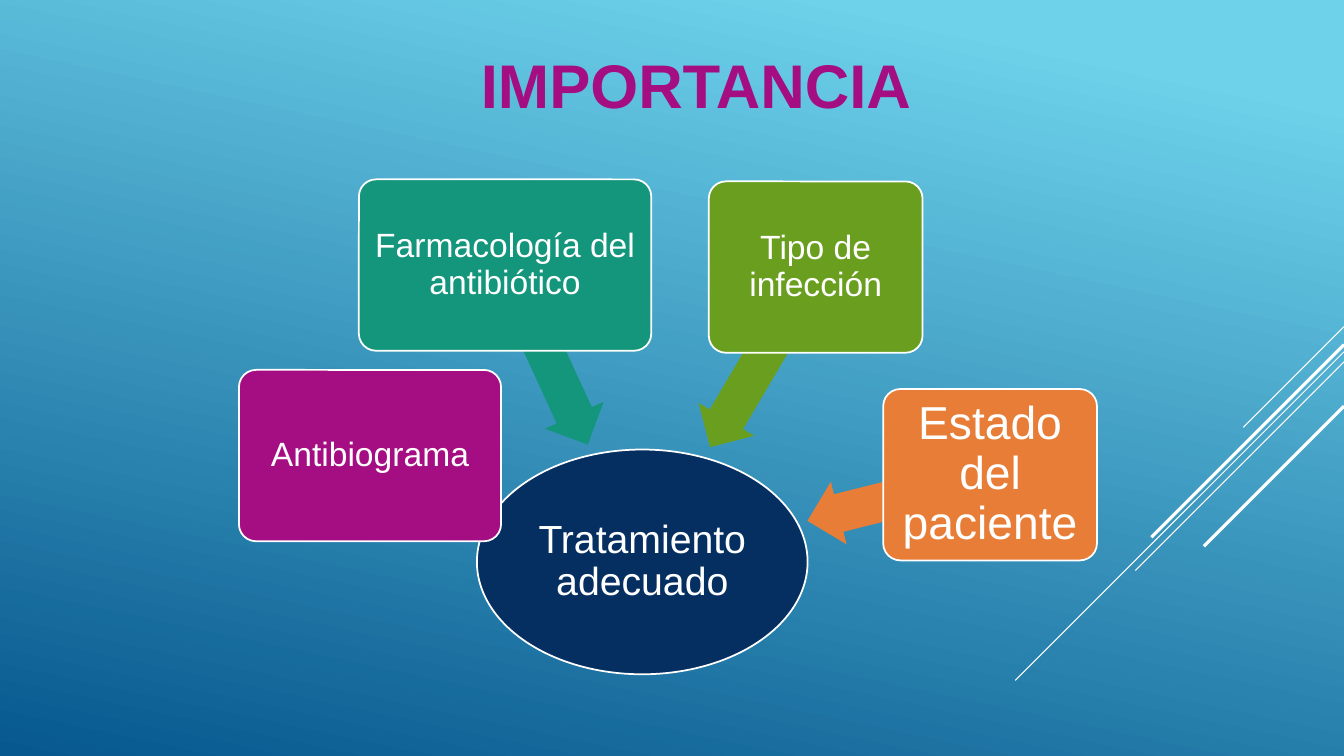
"""Build the slide on what leads to an adequate antibiotic treatment."""
from dataclasses import dataclass

from lxml.etree import SubElement
from pptx import Presentation
from pptx.dml.color import RGBColor
from pptx.enum.shapes import MSO_CONNECTOR as Connector, MSO_SHAPE as Shape
from pptx.enum.text import MSO_ANCHOR as Anchor, MSO_AUTO_SIZE as AutoSize, PP_ALIGN as Align
from pptx.oxml.ns import qn
from pptx.util import Inches, Pt


@dataclass(frozen=True)
class Theme:
    font: str = "Arial"
    white: str = "FFFFFF"
    sky: str = "6ED2EB"
    ocean: str = "06588E"
    navy: str = "052F61"
    magenta: str = "A50E82"
    teal: str = "14967C"
    green: str = "6A9E1F"
    orange: str = "E87D37"
    title_size: int = 44
    large_size: int = 33
    center_size: int = 28
    box_size: int = 24
    outline: float = 1.25


class Deck:
    def __init__(self, theme):
        self.theme = theme
        self.presentation = Presentation()
        self.presentation.slide_width = Inches(13.33)
        self.presentation.slide_height = Inches(7.5)
        self.slide = self.presentation.slides.add_slide(self.presentation.slide_layouts[5])

    def background(self):
        fill = self.slide.background.fill
        fill.gradient()
        fill.gradient_angle = 360 - 102
        stops = ((0.1, self.theme.sky), (1, self.theme.ocean))
        for stop, (position, color) in zip(fill.gradient_stops, stops):
            stop.position = position
            stop.color.rgb = RGBColor.from_string(color)

    def label(self, shape, text, size, color, inset, bold=False):
        frame = shape.text_frame
        frame.text = text
        frame.word_wrap = True
        frame.auto_size = AutoSize.NONE
        frame.vertical_anchor = Anchor.MIDDLE
        frame.margin_left = frame.margin_right = Inches(inset)
        frame.margin_top = frame.margin_bottom = Inches(inset)
        paragraph = frame.paragraphs[0]
        paragraph.alignment = Align.CENTER
        font = paragraph.runs[0].font
        font.name, font.size, font.bold = self.theme.font, Pt(size), bold
        font.color.rgb = RGBColor.from_string(color)
        return frame

    def title(self, text, left, top, width, height):
        title = self.slide.shapes.title
        title.left, title.top = Inches(left), Inches(top)
        title.width, title.height = Inches(width), Inches(height)
        frame = self.label(title, text, self.theme.title_size, self.theme.magenta, 0.1, True)
        frame.vertical_anchor = Anchor.TOP
        frame.margin_top = Inches(0.11)

    def diagonal(self, top, run, weight):
        right = 13.33
        line = self.slide.shapes.add_connector(
            Connector.STRAIGHT, Inches(right), Inches(top), Inches(right - run), Inches(top + run))
        line.line.color.rgb = RGBColor.from_string(self.theme.white)
        line.line.width = Pt(weight)
        SubElement(line._element.spPr, qn("a:effectLst"))

    def solid(self, kind, left, top, width, height, color):
        shape = self.slide.shapes.add_shape(
            kind, Inches(left), Inches(top), Inches(width), Inches(height))
        shape.shadow.inherit = False
        shape.fill.solid()
        shape.fill.fore_color.rgb = RGBColor.from_string(color)
        shape.line.fill.background()
        return shape

    def node(self, kind, text, left, top, width, height, color, size, inset):
        node = self.solid(kind, left, top, width, height, color)
        node.line.color.rgb = RGBColor.from_string(self.theme.white)
        node.line.width = Pt(self.theme.outline)
        frame = self.label(node, text, size, self.theme.white, inset)
        frame.paragraphs[0].line_spacing = 0.9
        return node

    def box(self, text, left, top, width, color, size, inset=0.05):
        box = self.node(Shape.ROUNDED_RECTANGLE, text, left, top, width, 1.7, color, size, inset)
        box.adjustments[0] = 0.1

    def arrow(self, left, top, width, angle, color):
        arrow = self.solid(Shape.LEFT_ARROW, left, top, width, 0.64, color)
        arrow.adjustments[0], arrow.adjustments[1] = 0.6, 0.5
        arrow.rotation = angle


def main():
    theme = Theme()
    deck = Deck(theme)
    deck.background()
    for top, run, weight in ((3.24, 1, 0.75), (3.49, 3.26, 0.75), (3.59, 2.07, 0.75),
                             (3.42, 1.91, 2.25), (4.03, 1.39, 2.25)):
        deck.diagonal(top, run, weight)
    deck.title("IMPORTANCIA", 4.15, 0.36, 5.51, 0.66)

    deck.node(Shape.OVAL, "Tratamiento adecuado", 4.73, 4.46, 3.28, 2.23,
              theme.navy, theme.center_size, 0.02)
    deck.box("Antibiograma", 2.37, 3.67, 2.6, theme.magenta, theme.box_size)
    deck.arrow(4.44, 3.2, 1.96, 245.3, theme.teal)
    deck.box("Farmacología del antibiótico", 3.56, 1.78, 2.9, theme.teal, theme.box_size)
    deck.arrow(6.53, 3.22, 2.08, 300.5, theme.green)
    deck.box("Tipo de infección", 7.03, 1.8, 2.12, theme.green, theme.box_size)
    deck.arrow(7.98, 4.62, 1.87, 345.9, theme.orange)
    deck.box("Estado del paciente", 8.76, 3.86, 2.12, theme.orange, theme.large_size, 0.07)
    deck.presentation.save("out.pptx")


if __name__ == "__main__":
    main()
